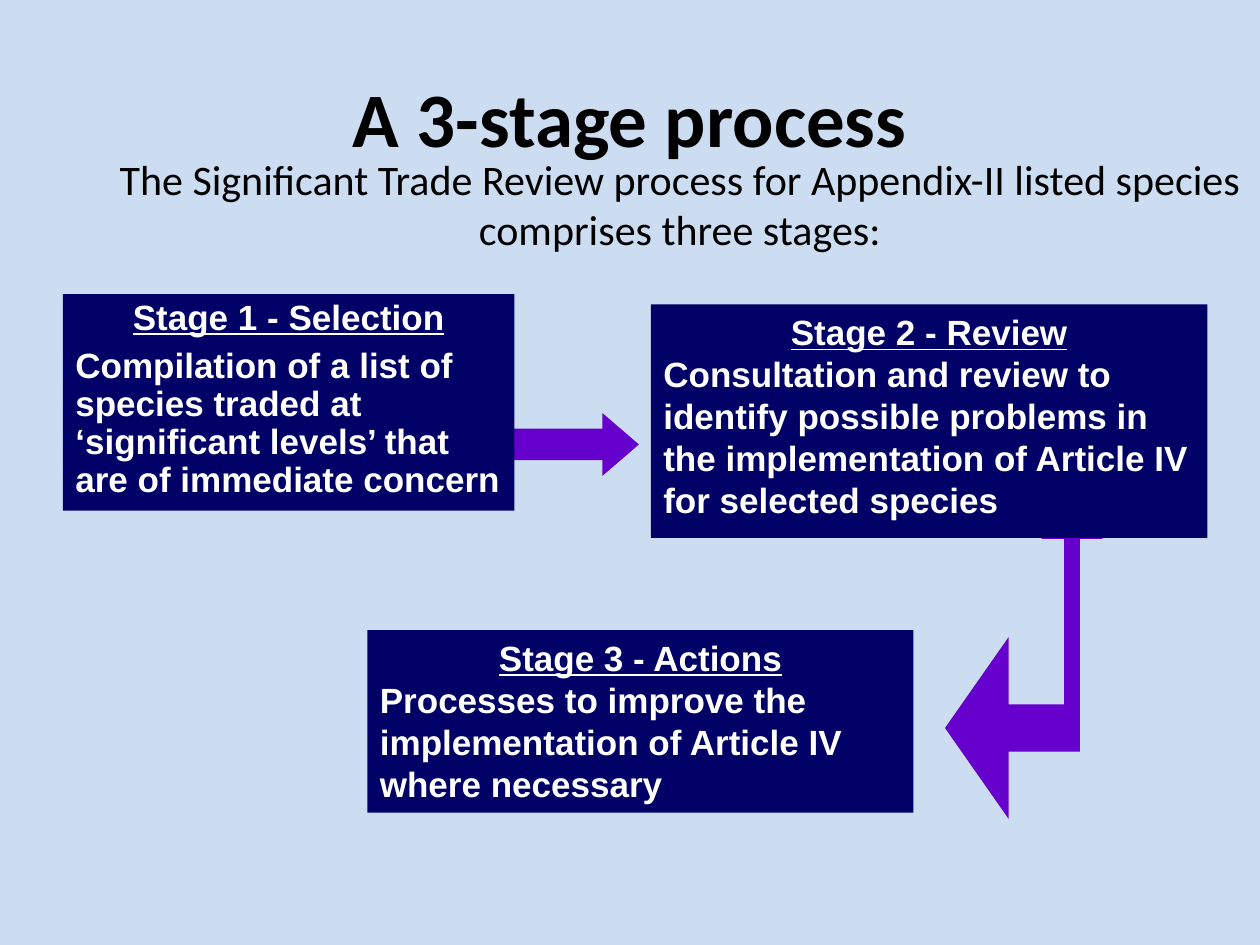
"""Build a slide showing the three stages of a trade review process."""
from pptx import Presentation
from pptx.dml.color import RGBColor
from pptx.enum.shapes import MSO_SHAPE
from pptx.enum.text import MSO_ANCHOR, PP_ALIGN
from pptx.util import Pt

THEME = {
    "back": "CCDDF2", "box": "000066", "arrow": "6600CC",
    "light": "FFFFFF", "dark": "000000",
    "head": "Calibri", "body": "Arial",
    "title": 44, "lead": 24, "stage": 20,
}
TITLE = "A 3-stage process"
LEAD = ("The Significant Trade Review process for Appendix-II listed species "
        "comprises three stages:")
STAGES = [
    {"name": "Stage 1 - Selection",
     "text": "Compilation of a list of species traded at ‘significant levels’ "
             "that are of immediate concern",
     "area": (36, 168, 258, 123.8), "line": 0.9, "after": 6},
    {"name": "Stage 2 - Review",
     "text": "Consultation and review to identify possible problems in the "
             "implementation of Article IV for selected species",
     "area": (372, 174, 318, 133.4), "line": 1, "after": 0},
    {"name": "Stage 3 - Actions",
     "text": "Processes to improve the implementation of Article IV "
             "where necessary",
     "area": (210, 360, 312, 104.4), "line": 1, "after": 0},
]
NEXT = (280.8, 236, 84.3, 36)
BEND = {"stem": 612.6, "thin": 4.5, "wide": 17.4, "top": 198, "neck": 308,
        "tip": 540, "base": 576.4, "mid": 416, "thick": 13.5, "tall": 52}


def color(key):
    return RGBColor.from_string(THEME[key])


def place(area):
    return [Pt(n) for n in area]


def paint(shape, key):
    shape.shadow.inherit = False
    shape.fill.solid()
    shape.fill.fore_color.rgb = color(key)
    shape.line.fill.background()


def style(para, face, size, ink, bold=False, align=PP_ALIGN.CENTER):
    para.alignment = align
    font = para.font
    font.name, font.size, font.bold = THEME[face], Pt(THEME[size]), bold
    font.color.rgb = color(ink)


def add_text(slide, area, text, size, bold, anchor):
    frame = slide.shapes.add_textbox(*place(area)).text_frame
    frame.word_wrap = True
    frame.vertical_anchor = anchor
    para = frame.paragraphs[0]
    para.text = text
    style(para, "head", size, "dark", bold)


def add_stage(slide, stage):
    box = slide.shapes.add_shape(MSO_SHAPE.RECTANGLE, *place(stage["area"]))
    paint(box, "box")
    frame = box.text_frame
    frame.word_wrap = True
    frame.vertical_anchor = MSO_ANCHOR.TOP
    frame.text = stage["name"] + "\n" + stage["text"]
    for para, align in zip(frame.paragraphs, (PP_ALIGN.CENTER, PP_ALIGN.LEFT)):
        style(para, "body", "stage", "light", True, align)
        para.line_spacing = stage["line"]
        para.space_after = Pt(stage["after"])
    frame.paragraphs[0].font.underline = True


def add_bend(slide, stem, thin, wide, top, neck, tip, base, mid, thick, tall):
    left, right = stem - thin, stem + thin
    high, low = mid - thick, mid + thick
    spots = [
        (stem, top), (stem - wide, neck), (left, neck), (left, high),
        (base, high), (base, mid - tall), (tip, mid), (base, mid + tall),
        (base, low), (right, low), (right, neck), (stem + wide, neck),
    ]
    first, *rest = [place(spot) for spot in spots]
    pen = slide.shapes.build_freeform(*first)
    pen.add_line_segments(rest, close=True)
    paint(pen.convert_to_shape(), "arrow")


def main():
    deck = Presentation()
    deck.slide_width, deck.slide_height = Pt(720), Pt(540)
    slide = deck.slides.add_slide(deck.slide_layouts[6])
    slide.background.fill.solid()
    slide.background.fill.fore_color.rgb = color("back")

    arrow = slide.shapes.add_shape(MSO_SHAPE.RIGHT_ARROW, *place(NEXT))
    arrow.adjustments[1] = 0.58
    paint(arrow, "arrow")
    add_bend(slide, **BEND)

    add_text(slide, (57, 84, 663, 66), LEAD, "lead", False, MSO_ANCHOR.TOP)
    add_text(slide, (36, 21.6, 648, 90), TITLE, "title", True,
             MSO_ANCHOR.MIDDLE)
    for stage in STAGES:
        add_stage(slide, stage)
    deck.save("out.pptx")


if __name__ == "__main__":
    main()
